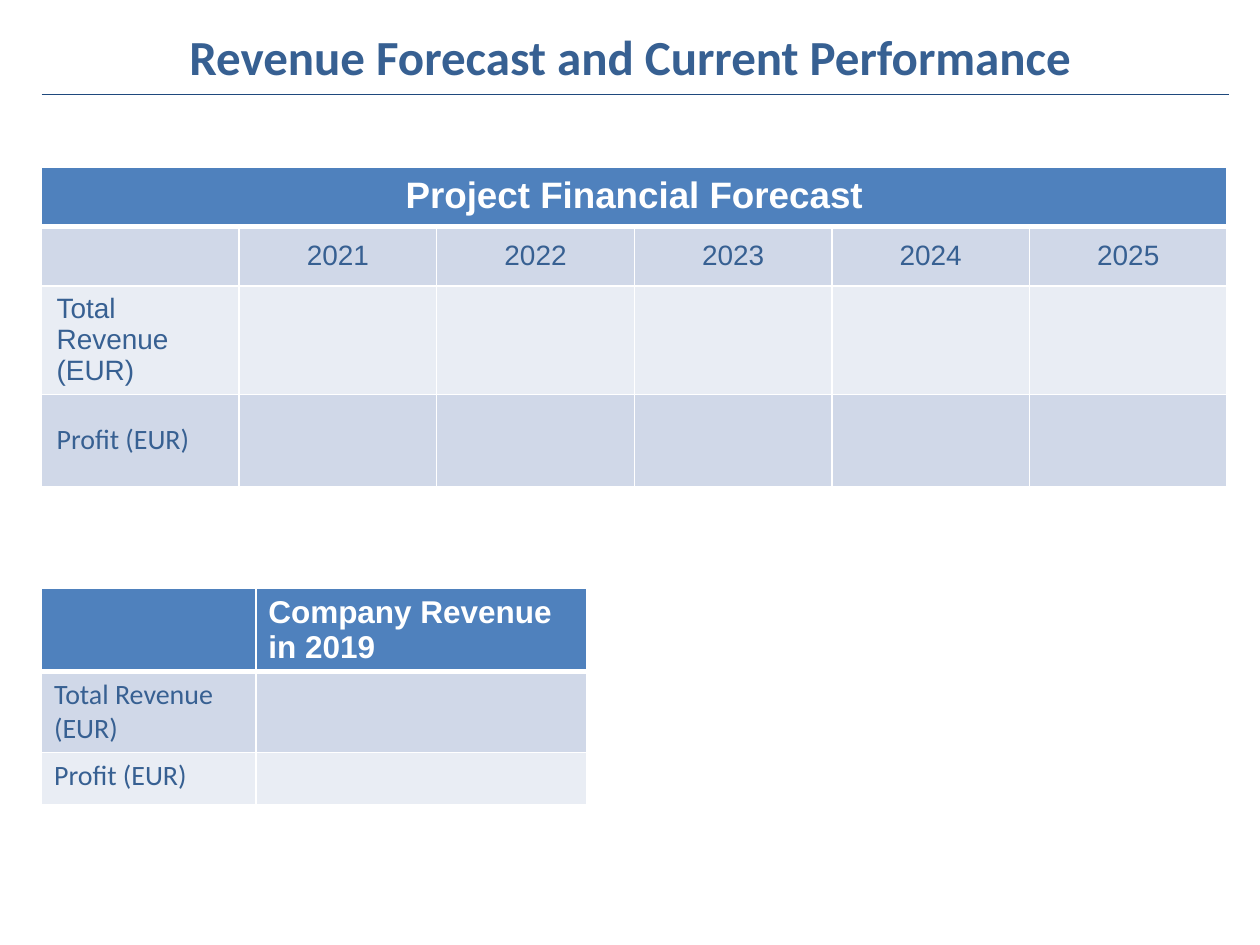
from lxml import etree
from pptx import Presentation
from pptx import util as u
from pptx.dml.color import RGBColor
from pptx.enum import shapes, text
from pptx.oxml import parse_xml
from pptx.oxml.ns import nsdecls, qn

BLUE = RGBColor(0x4F, 0x81, 0xBD)
INK = RGBColor(0x37, 0x60, 0x92)
RULE = RGBColor(0x1F, 0x49, 0x7D)
WHITE = RGBColor(0xFF, 0xFF, 0xFF)
BANDS = (RGBColor(0xE9, 0xED, 0xF4), RGBColor(0xD0, 0xD8, 0xE8))


def write(tf, words, size, font, color, bold=False, align=text.PP_ALIGN.LEFT):
    p = tf.paragraphs[0]
    p.alignment = align
    r = p.add_run()
    r.text = words
    r.font.size = u.Pt(size)
    r.font.name = font
    r.font.bold = bold
    r.font.color.rgb = color


def add_title(s, x, y, w, h, words):
    sp = s.shapes.title
    sp.left, sp.top, sp.width, sp.height = (u.Inches(v) for v in (x, y, w, h))
    write(sp.text_frame, words, 28, "Calibri", INK, True, text.PP_ALIGN.CENTER)


def add_rule(s, x, y, w):
    line = s.shapes.add_connector(
        shapes.MSO_CONNECTOR.STRAIGHT,
        u.Inches(x), u.Inches(y), u.Inches(x + w), u.Inches(y))
    line.line.color.rgb = RULE
    line.line.width = u.Pt(1)
    etree.SubElement(line._element.spPr, qn("a:effectLst"))


def set_borders(cell, row):
    widths = {"L": 1, "R": 1, "T": 3 if row == 1 else 1, "B": 3 if row == 0 else 1}
    tcPr = cell._tc.get_or_add_tcPr()
    for i, (side, width) in enumerate(widths.items()):
        tcPr.insert(i, parse_xml(
            f'<a:ln{side} {nsdecls("a")} w="{u.Pt(width)}"><a:solidFill>'
            f'<a:srgbClr val="{WHITE}"/></a:solidFill></a:ln{side}>'))


def add_grid(s, x, y, w, h, cols, rows):
    frame = s.shapes.add_table(
        len(rows), len(cols), u.Inches(x), u.Inches(y), u.Inches(w), u.Inches(h))
    table = frame.table
    for col, width in zip(table.columns, cols):
        col.width = u.Inches(width)
    for i, (row, height) in enumerate(zip(table.rows, rows)):
        row.height = u.Inches(height)
        for cell in row.cells:
            cell.fill.solid()
            cell.fill.fore_color.rgb = BANDS[i % 2] if i else BLUE
            set_borders(cell, i)
    frame.height = u.Inches(h)
    return table


def add_forecast(s, x, y, w, h):
    table = add_grid(s, x, y, w, h, [w / 6] * 6, [0.47, 0.47, 0.67, 0.73])
    center = text.PP_ALIGN.CENTER
    head = table.cell(0, 0)
    head.merge(table.cell(0, 5))
    write(head.text_frame, "Project Financial Forecast", 21, "Arial", WHITE, True, center)
    years = [table.cell(1, col) for col in range(1, 6)]
    for year, cell in enumerate(years, 2021):
        write(cell.text_frame, str(year), 16, "Arial", INK, align=center)
    labels = [table.cell(row, 0) for row in (2, 3)]
    write(labels[0].text_frame, "Total Revenue (EUR)", 16, "Arial", INK)
    write(labels[1].text_frame, "Profit (EUR)", 16, "Calibri", INK)
    for cell in [head, *years, *labels]:
        cell.margin_left = cell.margin_right = u.Inches(0.12)
        cell.margin_top = cell.margin_bottom = u.Inches(0.06)
    for cell in years + labels:
        cell.vertical_anchor = text.MSO_ANCHOR.MIDDLE


def add_current(s, x, y, w, h):
    table = add_grid(s, x, y, w, h, [1.7, w - 1.7], [0.41] * 3)
    write(table.cell(0, 1).text_frame, "Company Revenue in 2019", 18, "Arial", WHITE, True)
    for row, label in enumerate(("Total Revenue (EUR)", "Profit (EUR)"), 1):
        write(table.cell(row, 0).text_frame, label, 16, "Calibri", INK)


def main():
    prs = Presentation()
    prs.slide_width, prs.slide_height = u.Inches(10), u.Inches(7.5)
    s = prs.slides.add_slide(prs.slide_layouts[5])
    add_title(s, 0.5, 0.13, 9, 0.62, "Revenue Forecast and Current Performance")
    add_rule(s, 0.33, 0.75, 9.42)
    add_forecast(s, 0.33, 1.33, 9.41, 2.33)
    add_current(s, 0.33, 4.67, 4.33, 1.74)
    prs.save("out.pptx")


if __name__ == "__main__":
    main()
